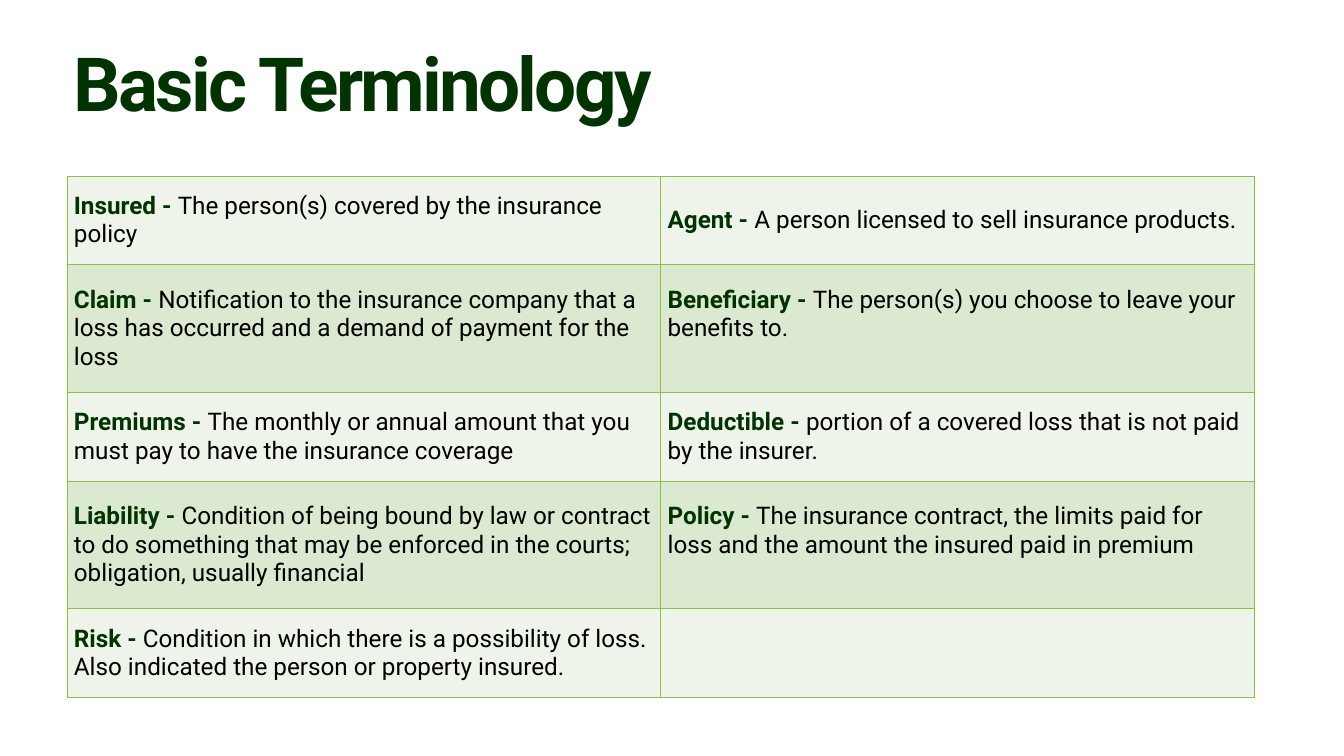
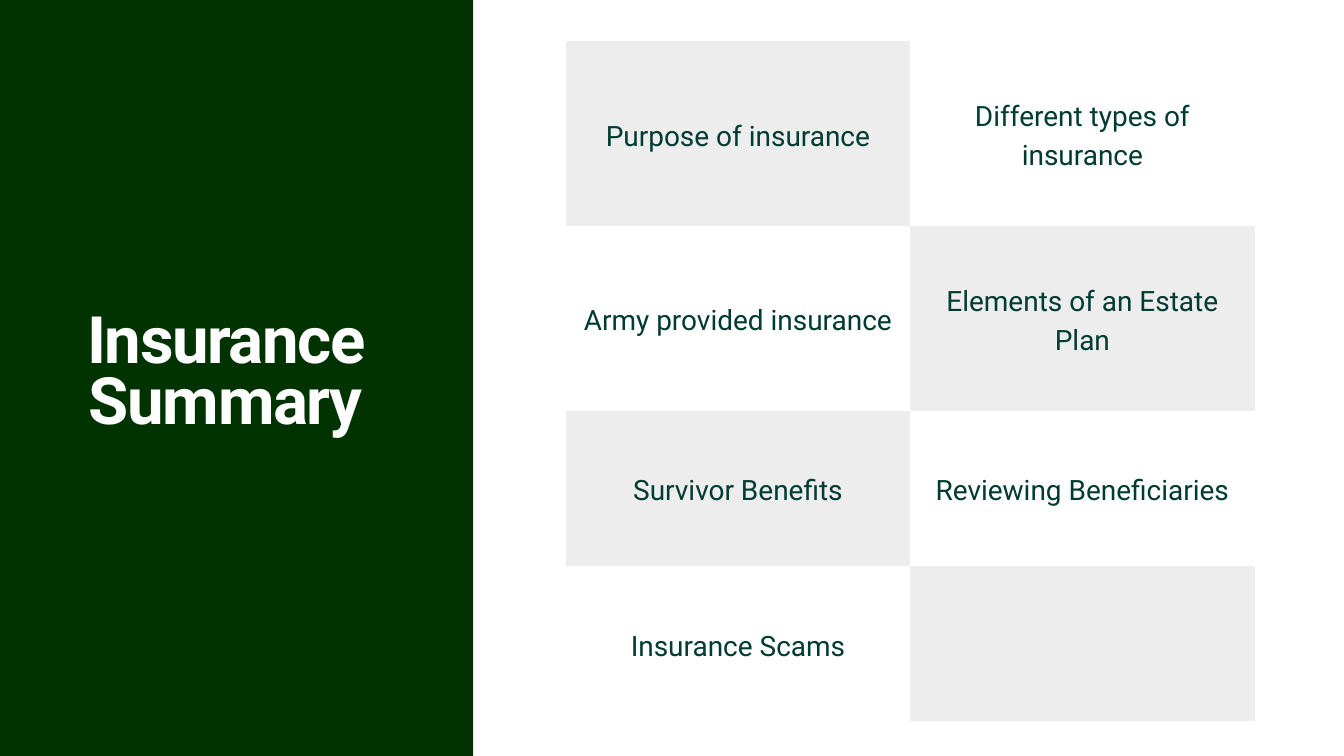
import lxml.etree
import pptx
import pptx.dml.color
import pptx.enum.shapes
import pptx.enum.text
import pptx.oxml.ns
import pptx.util

Inches, Pt = pptx.util.Inches, pptx.util.Pt
ALIGN, ANCHOR = pptx.enum.text.PP_ALIGN, pptx.enum.text.MSO_ANCHOR

GREEN, BLACK, WHITE = "003300", "000000", "FFFFFF"
TEAL, GREY, BORDER = "003B31", "EDEDED", "8BC145"
BANDS = ("EEF4E9", "DAE9CF")

TERMS = [
    [("Insured", "The person(s) covered by the insurance policy"),
     ("Agent", "A person licensed to sell insurance products.")],
    [("Claim", "Notification to the insurance company that a loss has occurred "
      "and a demand of payment for the loss"),
     ("Beneficiary", "The person(s) you choose to leave your benefits to.")],
    [("Premiums", "The monthly or annual amount that you must pay to have the "
      "insurance coverage"),
     ("Deductible", "portion of a covered loss that is not paid by the insurer.")],
    [("Liability", "Condition of being bound by law or contract to do something "
      "that may be enforced in the courts; obligation, usually financial"),
     ("Policy", "The insurance contract, the limits paid for loss and the amount "
      "the insured paid in premium")],
    [("Risk", "Condition in which there is a possibility of loss. Also indicated "
      "the person or property insured."), None],
]
TOPICS = [
    ["Purpose of insurance", "Different types of insurance"],
    ["Army provided insurance", "Elements of an Estate Plan"],
    ["Survivor Benefits", "Reviewing Beneficiaries"],
    ["Insurance Scams", None],
]


def rgb(color):
    return pptx.dml.color.RGBColor.from_string(color)


def apply(obj, values):
    for name, value in values.items():
        setattr(obj, name, value)


class Deck:
    font = "Roboto"

    def __init__(self):
        self.prs = pptx.Presentation()
        apply(self.prs, {"slide_width": Inches(20), "slide_height": Inches(11.25)})

    def slide(self):
        self.s = self.prs.slides.add_slide(self.prs.slide_layouts[6])

    def run(self, p, text, size, color, bold=False, spacing=None):
        """Add a run; spacing is the letter spacing in points."""
        r = p.add_run()
        r.text = text
        apply(r.font, {"name": self.font, "size": Pt(size), "bold": bold})
        r.font.color.rgb = rgb(color)
        if spacing:
            r.font._element.set("spc", str(int(spacing * 100)))

    def band(self, *box, color):
        sp = self.s.shapes.add_shape(
            pptx.enum.shapes.MSO_SHAPE.RECTANGLE, *map(Inches, box))
        sp.shadow.inherit = False
        sp.fill.solid()
        sp.fill.fore_color.rgb = rgb(color)
        sp.line.fill.background()

    def title(self, text, *box, size, color, spacing, frame, para):
        tf = self.s.shapes.add_textbox(*map(Inches, box)).text_frame
        apply(tf, {"word_wrap": True, **frame})
        p = tf.paragraphs[0]
        apply(p, para)
        self.run(p, text, size, color, True, spacing)

    def borders(self, cell, color=None):
        """Draw all four cell borders, or none without a colour."""
        tc_pr = cell._tc.get_or_add_tcPr()
        qn = pptx.oxml.ns.qn
        for side in "LRTB":
            ln = lxml.etree.SubElement(tc_pr, qn(f"a:ln{side}"), w=str(Pt(1)))
            if color:
                fill = lxml.etree.SubElement(ln, qn("a:solidFill"))
                lxml.etree.SubElement(fill, qn("a:srgbClr"), val=color)
            else:
                lxml.etree.SubElement(ln, qn("a:noFill"))

    def table(self, left, top, width, heights, rows, fill, write, border=None):
        """Fill a table; fill(row, col) gives a colour or None, write(cell, item) the text."""
        cols = len(rows[0])
        tbl = self.s.shapes.add_table(
            len(rows), cols, Inches(left), Inches(top),
            Inches(width), Inches(sum(heights))).table
        apply(tbl, {"first_row": False, "horz_banding": False})
        for i, row in enumerate(rows):
            tbl.rows[i].height = Inches(heights[i])
            for j, item in enumerate(row):
                cell = tbl.cell(i, j)
                cell.vertical_anchor = ANCHOR.MIDDLE
                self.borders(cell, border)
                color = fill(i, j)
                if color:
                    cell.fill.solid()
                    cell.fill.fore_color.rgb = rgb(color)
                else:
                    cell.fill.background()
                if item:
                    write(cell, item)
        return tbl


def terminology(deck):
    def write_term(cell, item):
        term, meaning = item
        p = cell.text_frame.paragraphs[0]
        deck.run(p, f"{term} - ", 26, GREEN, True)
        deck.run(p, meaning, 26, BLACK)

    deck.slide()
    deck.title("Basic Terminology", 1, 0.54, 9.38, 1.53,
               size=80, color=GREEN, spacing=-3,
               frame={"vertical_anchor": ANCHOR.MIDDLE},
               para={"line_spacing": 0.9, "space_after": Pt(6)})
    tbl = deck.table(1, 2.62, 17.67, [1.32, 1.9, 1.32, 1.9, 1.32], TERMS,
                     lambda i, j: BANDS[i % 2], write_term, BORDER)
    # Raise the two-line cells to the first line of their three-line neighbours.
    for i in (1, 3):
        tbl.cell(i, 1).margin_bottom = Inches(0.48)


def summary(deck):
    def write_topic(cell, topic):
        apply(cell, {f"margin_{side}": Inches(0.21)
                     for side in ("left", "right", "top", "bottom")})
        p = cell.text_frame.paragraphs[0]
        apply(p, {"alignment": ALIGN.CENTER, "line_spacing": Pt(42)})
        deck.run(p, topic, 30, TEAL)

    deck.slide()
    deck.table(8.42, 0.61, 10.25, [2.75, 2.75, 2.31, 2.31], TOPICS,
               lambda i, j: None if (i + j) % 2 else GREY, write_topic)
    deck.band(-0.03, 0, 7.07, 11.25, color=GREEN)
    deck.title("Insurance Summary", 0.92, 4.7, 4.88, 1.84,
               size=70, color=WHITE, spacing=-1.5,
               frame={f"margin_{side}": 0 for side in ("left", "right", "top", "bottom")},
               para={"alignment": ALIGN.CENTER, "line_spacing": Pt(65)})


def main():
    deck = Deck()
    terminology(deck)
    summary(deck)
    deck.prs.save("out.pptx")


if __name__ == "__main__":
    main()
